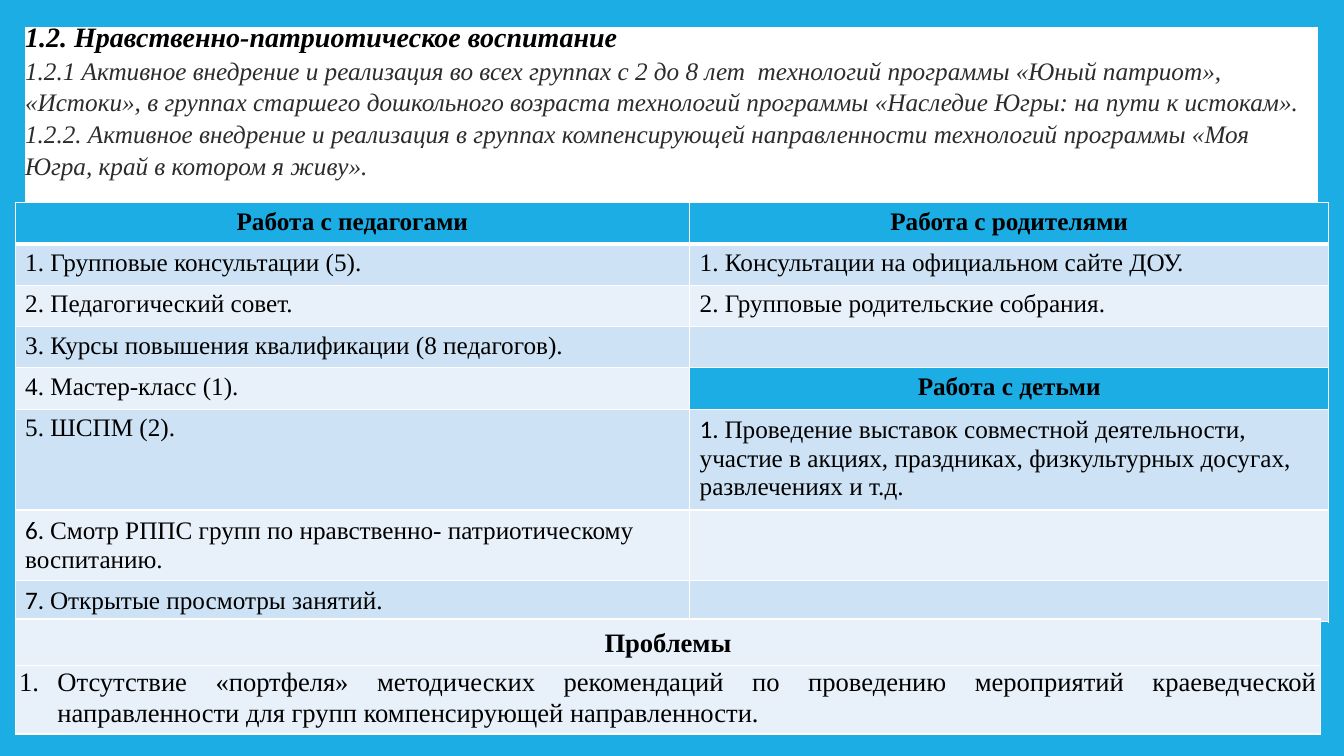
import pptx
import pptx.dml.color
import pptx.enum.shapes
import pptx.enum.text
import pptx.oxml
import pptx.oxml.ns
import pptx.util

Inches = pptx.util.Inches
Pt = pptx.util.Pt
RGBColor = pptx.dml.color.RGBColor
ALIGN = pptx.enum.text.PP_ALIGN

BLUE = RGBColor(0x1C, 0xAD, 0xE4)
WHITE = RGBColor(0xFF, 0xFF, 0xFF)
BLACK = RGBColor(0x00, 0x00, 0x00)
CHARCOAL = RGBColor(0x2C, 0x2C, 0x2C)
BAND_DARK = RGBColor(0xCD, 0xE3, 0xF5)
BAND_LIGHT = RGBColor(0xE8, 0xF1, 0xFA)

BODY = {"name": "Times New Roman", "size": Pt(18), "bold": False}
NUMBER = {**BODY, "name": "Calibri"}
HEADING = {**BODY, "bold": True}
GOAL = {**BODY, "italic": True}
GOAL_TITLE = {**GOAL, "size": Pt(20), "bold": True}
PROBLEM = {**BODY, "size": Pt(19)}
PROBLEM_TITLE = {**PROBLEM, "bold": True}

TIGHT_CELL = {
    "margin_left": Inches(0.04),
    "margin_top": Inches(0.01),
    "margin_right": Inches(0.04),
    "margin_bottom": Inches(0),
}

GOALS = [
    ("1.2. Нравственно-патриотическое воспитание", GOAL_TITLE, BLACK),
    ("1.2.1 Активное внедрение и реализация во всех группах с 2 до 8 лет  технологий "
     "программы «Юный патриот», «Истоки», в группах старшего дошкольного возраста "
     "технологий программы «Наследие Югры: на пути к истокам».", GOAL, CHARCOAL),
    ("1.2.2. Активное внедрение и реализация в группах компенсирующей направленности "
     "технологий программы «Моя Югра, край в котором я живу».", GOAL, CHARCOAL),
]

HEADINGS = {"Работа с педагогами", "Работа с родителями", "Работа с детьми"}
ACTIVITIES = [
    ("Работа с педагогами", "Работа с родителями"),
    ("1. Групповые консультации (5).", "1. Консультации на официальном сайте ДОУ."),
    ("2. Педагогический совет.", "2. Групповые родительские собрания."),
    ("3. Курсы повышения квалификации (8 педагогов).", ""),
    ("4. Мастер-класс (1).", "Работа с детьми"),
    ("5. ШСПМ (2).",
     ("1. ", "Проведение выставок совместной деятельности, участие в акциях, "
      "праздниках, физкультурных досугах, развлечениях и т.д.")),
    (("6. ", "Смотр РППС групп по нравственно- патриотическому воспитанию."), ""),
    (("7. ", "Открытые просмотры занятий."), ""),
]

PROBLEMS = [
    ("Проблемы", PROBLEM_TITLE, ALIGN.CENTER, 0.46),
    ("Отсутствие «портфеля» методических рекомендаций по проведению мероприятий "
     "краеведческой направленности для групп компенсирующей направленности.",
     PROBLEM, ALIGN.JUSTIFY, 0.61),
]


def apply_format(target, values):
    for key, value in values.items():
        setattr(target, key, value)


def add_run(paragraph, text, font_format, color=BLACK):
    run = paragraph.add_run()
    run.text = text
    apply_format(run.font, font_format)
    run.font.color.rgb = color


def add_panel(slide):
    panel = slide.shapes.add_shape(
        pptx.enum.shapes.MSO_SHAPE.RECTANGLE,
        Inches(0.25), Inches(0.27), Inches(12.82), Inches(6.97))
    panel.shadow.inherit = False
    panel.fill.solid()
    panel.fill.fore_color.rgb = WHITE
    panel.line.fill.background()


def add_goals(slide):
    frame = slide.shapes.add_textbox(
        Inches(0.15), Inches(0.13), Inches(13.05), Inches(1.65)).text_frame
    frame.word_wrap = True
    frame.auto_size = pptx.enum.text.MSO_AUTO_SIZE.SHAPE_TO_FIT_TEXT
    for index, (text, font_format, color) in enumerate(GOALS):
        paragraph = frame.add_paragraph() if index else frame.paragraphs[0]
        paragraph.line_spacing = 1.05
        add_run(paragraph, text, font_format, color)


def add_plain_table(slide, left, top, widths, heights):
    table = slide.shapes.add_table(
        len(heights), len(widths), Inches(left), Inches(top),
        Inches(sum(widths)), Inches(sum(heights))).table
    for column, width in zip(table.columns, widths):
        column.width = Inches(width)
    for row, height in zip(table.rows, heights):
        row.height = Inches(height)
    return table


def style_cell(cell, fill, top=1, bottom=1):
    properties = cell._tc.get_or_add_tcPr()
    for edge, width in (("L", 1), ("R", 1), ("T", top), ("B", bottom)):
        properties.append(pptx.oxml.parse_xml(
            f'<a:ln{edge} {pptx.oxml.ns.nsdecls("a")} w="{Pt(width)}">'
            f'<a:solidFill><a:srgbClr val="{WHITE}"/></a:solidFill></a:ln{edge}>'))
    cell.fill.solid()
    cell.fill.fore_color.rgb = fill


def add_activities(slide):
    table = add_plain_table(slide, 0.15, 2.01, [6.69, 6.34], [0.41] * len(ACTIVITIES))
    for row, entries in enumerate(ACTIVITIES):
        band = BAND_DARK if row % 2 else BAND_LIGHT
        for column, entry in enumerate(entries):
            cell = table.cell(row, column)
            is_heading = entry in HEADINGS
            style_cell(cell, BLUE if is_heading else band,
                       top=3 if row == 1 else 1, bottom=3 if row == 0 else 1)
            paragraph = cell.text_frame.paragraphs[0]
            if is_heading:
                paragraph.alignment = ALIGN.CENTER
                add_run(paragraph, entry, HEADING)
            elif isinstance(entry, tuple):
                number, activity = entry
                add_run(paragraph, number, NUMBER)
                add_run(paragraph, activity, BODY)
            elif entry:
                add_run(paragraph, entry, BODY)


def number_paragraph(paragraph):
    properties = paragraph._p.get_or_add_pPr()
    properties.set("marL", str(Inches(0.38)))
    properties.set("indent", str(Inches(-0.38)))
    properties.append(pptx.oxml.parse_xml(
        f'<a:buAutoNum {pptx.oxml.ns.nsdecls("a")} type="arabicPeriod"/>'))


def add_problems(slide):
    table = add_plain_table(slide, 0.15, 6.14, [12.95], [entry[3] for entry in PROBLEMS])
    for row, (text, font_format, alignment, _) in enumerate(PROBLEMS):
        cell = table.cell(row, 0)
        style_cell(cell, BAND_LIGHT)
        apply_format(cell, TIGHT_CELL)
        paragraph = cell.text_frame.paragraphs[0]
        apply_format(paragraph, {"alignment": alignment, "line_spacing": 1.06})
        add_run(paragraph, text, font_format)
    table.cell(0, 0).vertical_anchor = pptx.enum.text.MSO_ANCHOR.MIDDLE
    number_paragraph(table.cell(1, 0).text_frame.paragraphs[0])


def main():
    presentation = pptx.Presentation()
    presentation.slide_width = Inches(13.33)
    presentation.slide_height = Inches(7.5)
    slide = presentation.slides.add_slide(presentation.slide_layouts[6])
    slide.background.fill.solid()
    slide.background.fill.fore_color.rgb = BLUE
    add_panel(slide)
    add_goals(slide)
    add_activities(slide)
    add_problems(slide)
    presentation.save("out.pptx")


if __name__ == "__main__":
    main()
